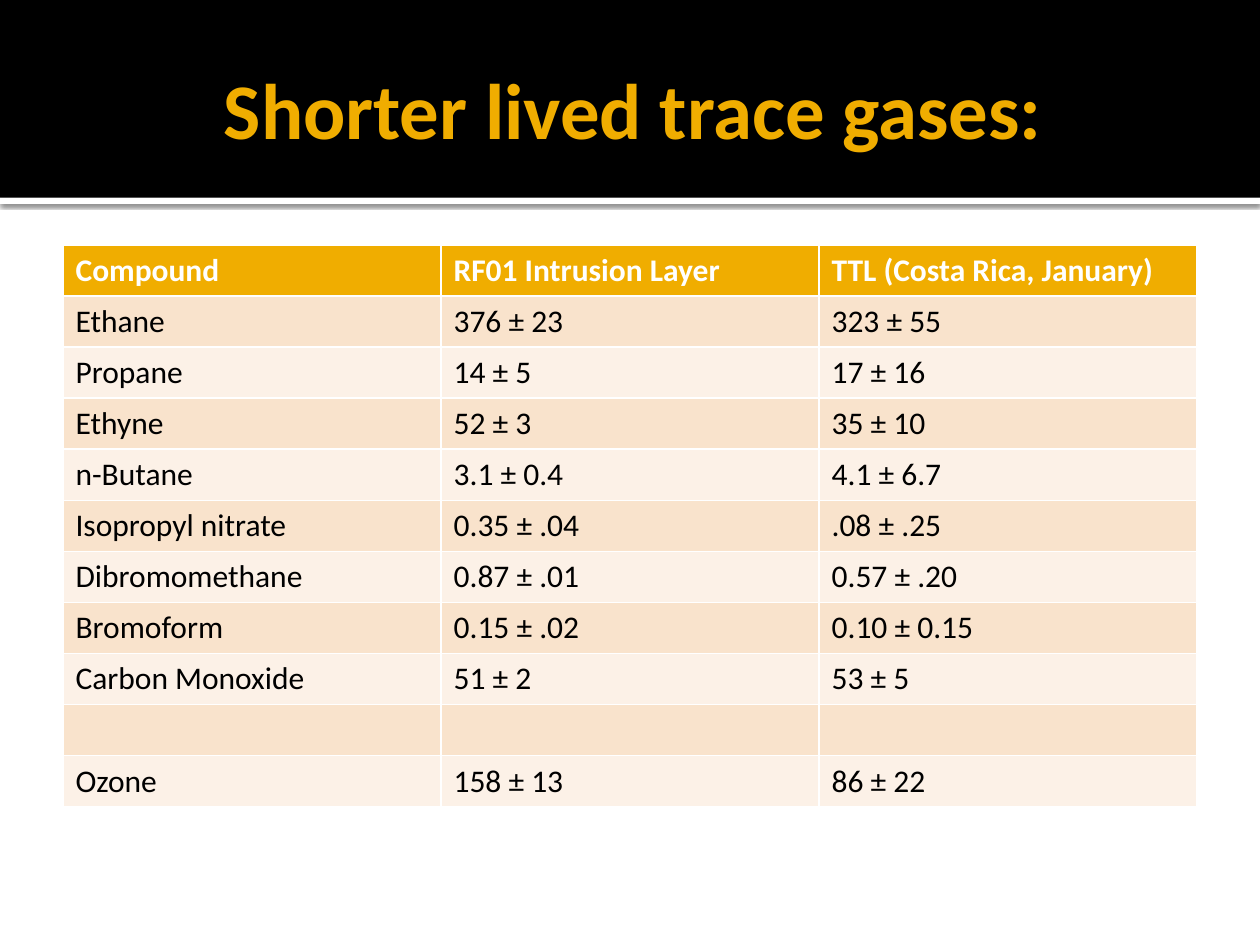
from pptx import Presentation
from pptx.dml.color import RGBColor
from pptx.enum.shapes import MSO_SHAPE as Shape
from pptx.enum.text import MSO_ANCHOR as Anchor, PP_ALIGN as Align
from pptx.oxml import parse_xml
from pptx.oxml.ns import nsdecls
from pptx.util import Pt

TITLE = "Shorter lived trace gases:"
ROWS = [
    ("Compound", "RF01 Intrusion Layer", "TTL (Costa Rica, January)"),
    ("Ethane", "376 ± 23", "323 ± 55"),
    ("Propane", "14 ± 5", "17 ± 16"),
    ("Ethyne", "52 ± 3", "35 ± 10"),
    ("n-Butane", "3.1 ± 0.4", "4.1 ± 6.7"),
    ("Isopropyl nitrate", "0.35 ± .04", ".08 ± .25"),
    ("Dibromomethane", "0.87 ± .01", "0.57 ± .20"),
    ("Bromoform", "0.15 ± .02", "0.10 ± 0.15"),
    ("Carbon Monoxide", "51 ± 2", "53 ± 5"),
    ("", "", ""),
    ("Ozone", "158 ± 13", "86 ± 22"),
]

FONT = "Calibri"
BLACK = RGBColor(0x00, 0x00, 0x00)
WHITE = RGBColor(0xFF, 0xFF, 0xFF)
GOLD = RGBColor(0xF0, 0xAD, 0x00)
BANDS = RGBColor(0xFC, 0xF1, 0xE7), RGBColor(0xF9, 0xE3, 0xCC)

WIDTH, HEIGHT = 720, 540
MARGIN = 36
HEAD_H, STRIP_H = 113, 3.6
TABLE_TOP, ROW_H = 139.9, 29.2


def add_bar(slide, top, height, color):
    bar = slide.shapes.add_shape(Shape.RECTANGLE, 0, Pt(top), Pt(WIDTH), Pt(height))
    bar.shadow.inherit = False
    bar.fill.solid()
    bar.fill.fore_color.rgb = color
    bar.line.fill.background()
    return bar


def set_font(par, size, color, bold):
    font = par.font
    font.name, font.size, font.bold = FONT, Pt(size), bold
    font.color.rgb = color


prs = Presentation()
prs.slide_width, prs.slide_height = Pt(WIDTH), Pt(HEIGHT)
slide = prs.slides.add_slide(prs.slide_layouts[6])

# Header band, with a white strip that casts a soft shadow below it
strip = add_bar(slide, HEAD_H, STRIP_H, WHITE)
effects = strip._element.spPr.find("{*}effectLst")
effects.append(parse_xml(
    f'<a:outerShdw {nsdecls("a")} blurRad="{Pt(2.5)}" dist="{Pt(0.8)}" dir="5400000">'
    '<a:srgbClr val="000000"><a:alpha val="60000"/></a:srgbClr></a:outerShdw>'))
add_bar(slide, 0, HEAD_H, BLACK)

# Title
box = slide.shapes.add_textbox(Pt(MARGIN), Pt(12.2), Pt(WIDTH - 2 * MARGIN), Pt(98.6))
frame = box.text_frame
frame.word_wrap = True
frame.vertical_anchor = Anchor.MIDDLE
frame.margin_right = Pt(3.6)
par = frame.paragraphs[0]
par.text, par.alignment = TITLE, Align.CENTER
set_font(par, 45, GOLD, True)

# Table: the default style supplies the white rules
table = slide.shapes.add_table(
    len(ROWS), len(ROWS[0]), Pt(MARGIN), Pt(TABLE_TOP),
    Pt(WIDTH - 2 * MARGIN), Pt(ROW_H * len(ROWS))).table
for r, row in enumerate(ROWS):
    head = r == 0
    for c, text in enumerate(row):
        cell = table.cell(r, c)
        cell.text = text
        cell.fill.solid()
        cell.fill.fore_color.rgb = GOLD if head else BANDS[r % 2]
        set_font(cell.text_frame.paragraphs[0], 18, WHITE if head else BLACK, head)

prs.save("out.pptx")
